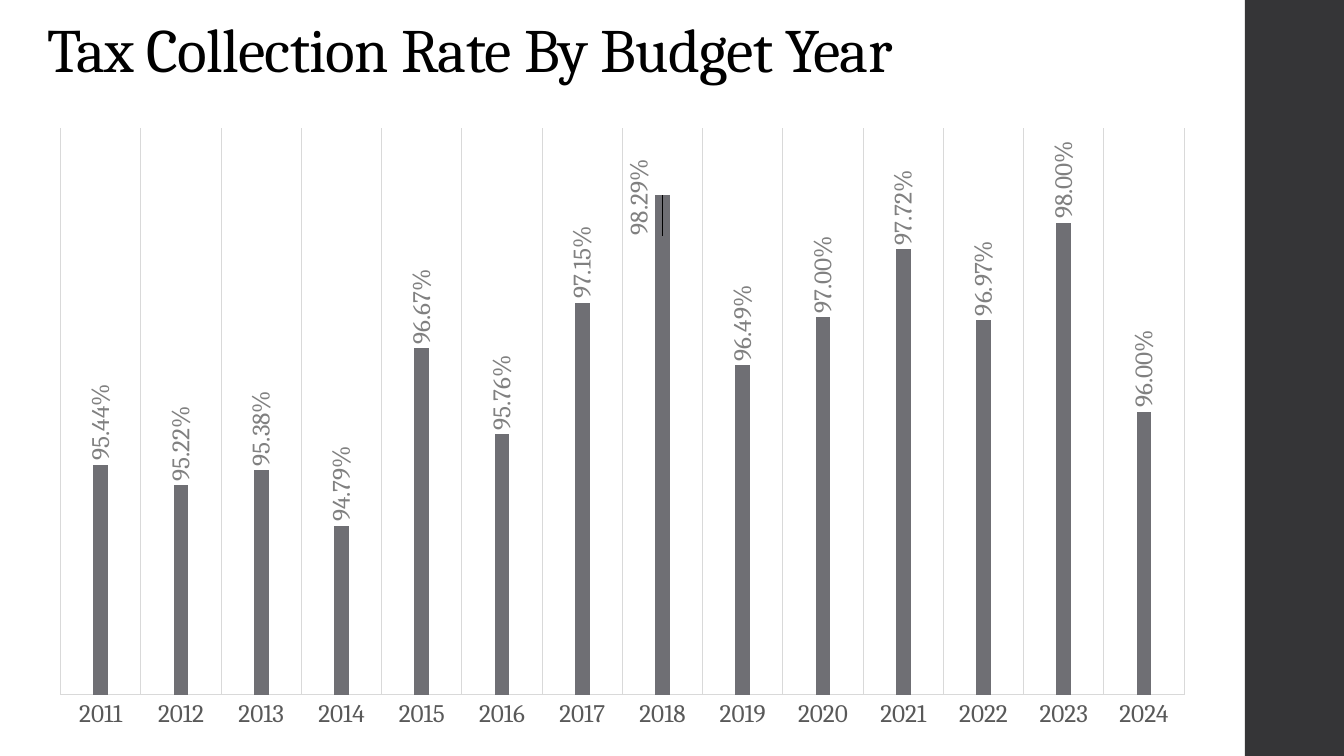
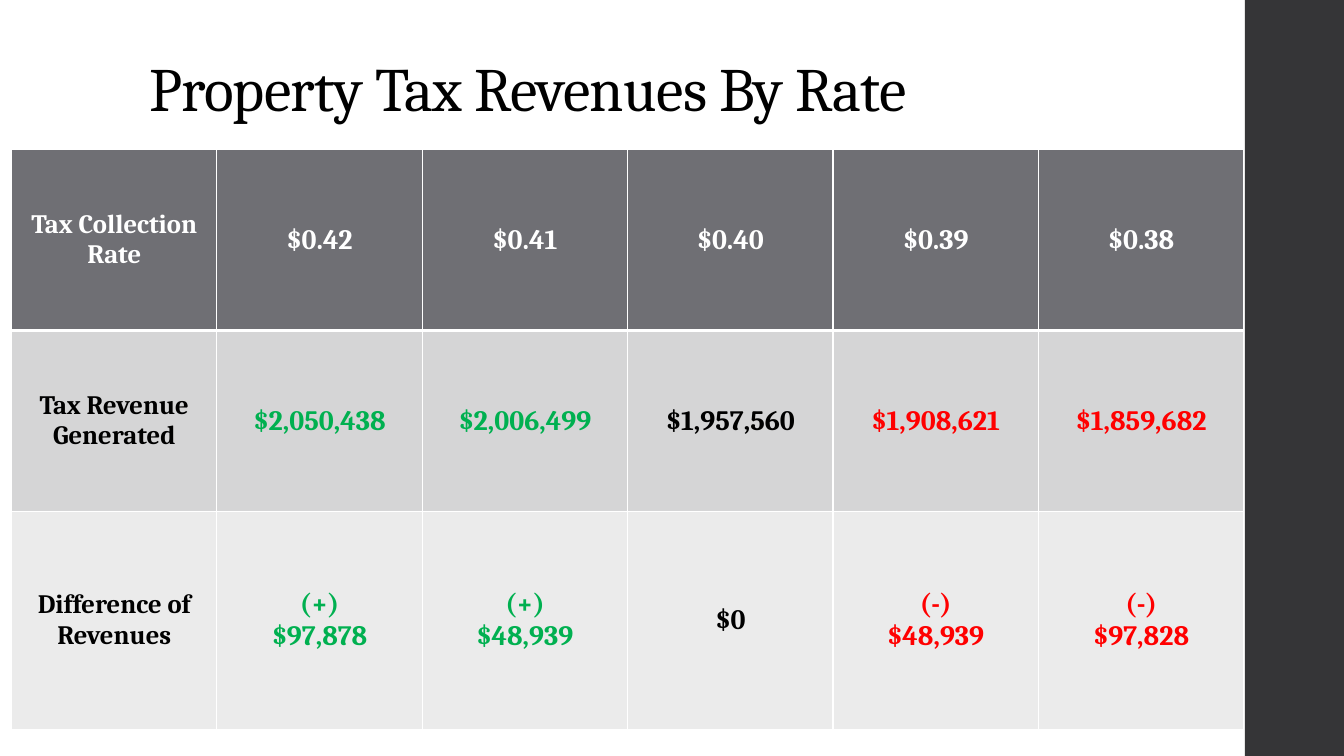
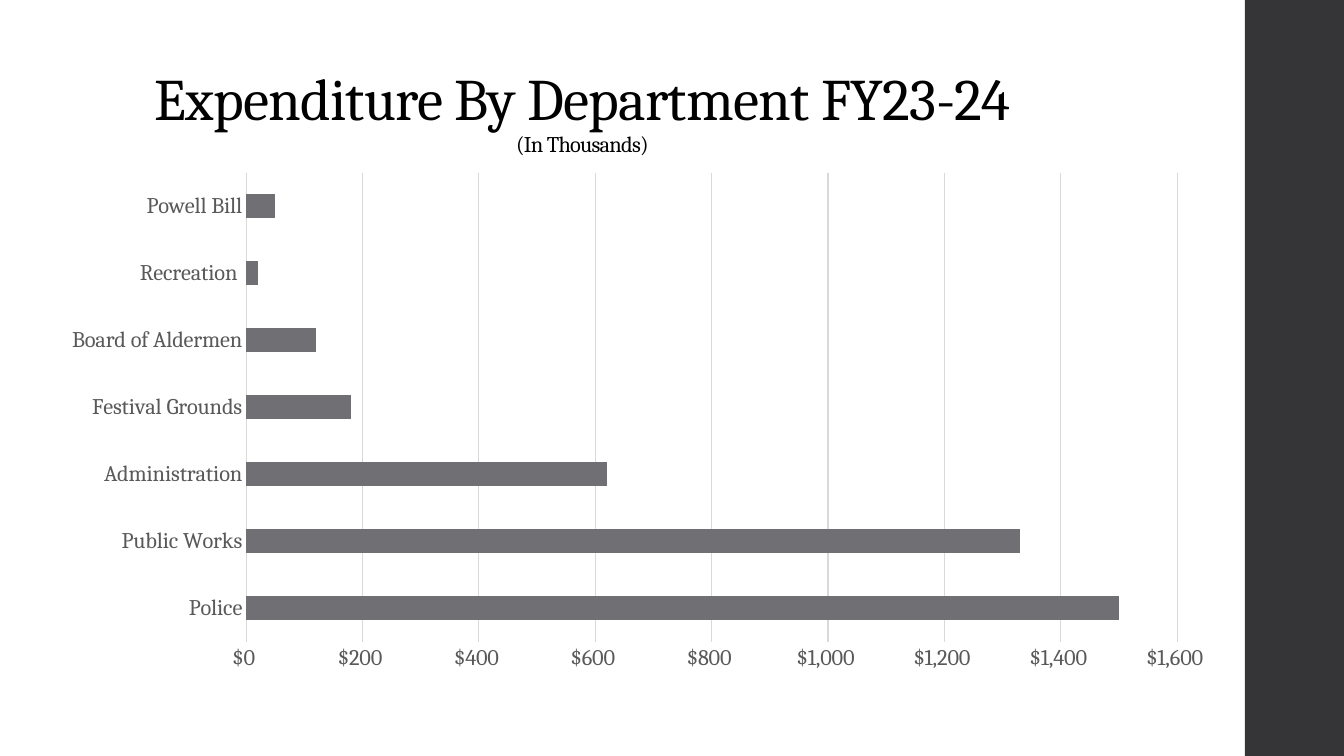
from dataclasses import dataclass
from copy import deepcopy

from lxml import etree
from pptx import Presentation
from pptx import util as u
from pptx.chart.data import CategoryChartData
from pptx.dml.color import RGBColor
from pptx.enum import chart as charts, shapes, text
from pptx.oxml import ns


@dataclass(frozen=True)
class Theme:
    font: str = "Cambria"
    paper: str = "FFFFFF"
    ink: str = "000000"
    band: str = "353537"
    accent: str = "6F6F74"
    row_dark: str = "D5D5D6"
    row_light: str = "EBEBEB"
    rule: str = "D9D9D9"
    axis_text: str = "595959"
    label_text: str = "808080"
    gain: str = "00B050"
    loss: str = "FF0000"
    title_size: float = 44
    long_title_size: float = 42
    subtitle_size: float = 16
    head_size: float = 19
    cell_size: float = 20
    label_size: float = 18
    axis_size: float = 16


THEME = Theme()
WIDTH, HEIGHT = u.Cm(33.87), u.Cm(19.05)
BAND_LEFT = u.Cm(31.37)


def rgb(value):
    return RGBColor.from_string(value)


def child(parent, tag, **attributes):
    return etree.SubElement(parent, ns.qn(tag), attributes)


class Deck:
    def __init__(self, theme):
        self.theme = theme
        self.deck = Presentation()
        self.deck.slide_width, self.deck.slide_height = WIDTH, HEIGHT
        self.page = None

    def add_page(self):
        """Start a slide with the dark band on its right edge."""
        self.page = self.deck.slides.add_slide(self.deck.slide_layouts[6])
        band = self.page.shapes.add_shape(
            shapes.MSO_SHAPE.RECTANGLE, BAND_LEFT, 0, WIDTH - BAND_LEFT, HEIGHT)
        band.shadow.inherit = False
        band.fill.solid()
        band.fill.fore_color.rgb = rgb(self.theme.band)
        band.line.fill.background()

    def style_font(self, font, size, color, bold=False):
        font.name, font.size, font.bold = self.theme.font, u.Pt(size), bold
        font.color.rgb = rgb(color)

    def add_title(self, at, lines, align=text.PP_ALIGN.LEFT):
        """Write (words, size) lines as one paragraph at the foot of its box."""
        box = self.page.shapes.add_textbox(*map(u.Cm, at))
        frame = box.text_frame
        frame.word_wrap = True
        frame.vertical_anchor = text.MSO_ANCHOR.BOTTOM
        para = frame.paragraphs[0]
        para.alignment, para.line_spacing = align, 0.9
        for number, (words, size) in enumerate(lines):
            if number:
                para.add_line_break()
            span = para.add_run()
            span.text = words
            self.style_font(span.font, size, self.theme.ink)
            span.font._element.set("spc", "-50")

    def add_bars(self, at, kind, categories, values, number_format, gap, axis_size):
        data = CategoryChartData(number_format=number_format)
        data.categories = categories
        data.add_series("Series 1", values)
        chart = self.page.shapes.add_chart(kind, *map(u.Cm, at), data).chart
        chart.has_legend = chart.has_title = False
        self.style_font(chart.font, 10, self.theme.ink)
        plot = chart.plots[0]
        plot.gap_width, plot.vary_by_categories = gap, False
        fill = plot.series[0].format.fill
        fill.solid()
        fill.fore_color.rgb = rgb(self.theme.accent)
        for axis in (chart.category_axis, chart.value_axis):
            axis.major_tick_mark = axis.minor_tick_mark = charts.XL_TICK_MARK.NONE
            axis.has_major_gridlines = False
            self.style_font(axis.tick_labels.font, axis_size, self.theme.axis_text)
        self.style_line(chart.category_axis.format.line)
        chart.value_axis.format.line.fill.background()
        return chart

    def style_line(self, line):
        line.color.rgb, line.width = rgb(self.theme.rule), u.Pt(0.75)

    def add_grid(self, axis):
        axis.has_major_gridlines = True
        self.style_line(axis.major_gridlines.format.line)

    def add_upright_labels(self, plot, number_format):
        plot.has_data_labels = False
        labels = plot.series[0].data_labels
        labels.show_value = True
        labels.number_format, labels.number_format_is_linked = number_format, False
        labels.position = charts.XL_LABEL_POSITION.OUTSIDE_END
        self.style_font(labels.font, self.theme.label_size, self.theme.label_text)
        body = labels._element.find(".//" + ns.qn("a:bodyPr"))
        body.set("rot", "-5400000")
        body.set("vert", "horz")
        return labels

    def shift_label(self, plot, index, across, down):
        """Move one label by fractions of the chart's width and height."""
        series = plot.series[0]
        series.points[index].data_label.position = charts.XL_LABEL_POSITION.OUTSIDE_END
        group = series.data_labels._element
        label = group.find(ns.qn("c:dLbl"))
        for old in label.findall(ns.qn("c:txPr")) + label.findall(ns.qn("c:spPr")):
            label.remove(old)
        layout = etree.Element(ns.qn("c:layout"))
        manual = child(layout, "c:manualLayout")
        child(manual, "c:x", val=str(across))
        child(manual, "c:y", val=str(down))
        parts = [layout] + [deepcopy(group.find(ns.qn(tag)))
                            for tag in ("c:numFmt", "c:txPr")]
        for place, part in enumerate(parts, 1):
            label.insert(place, part)

    def add_table(self, at, rows, heights, fills, colors):
        """Fill a table; colors holds one list of text colours per row."""
        frame = self.page.shapes.add_table(len(rows), len(rows[0]), *map(u.Cm, at))
        table = frame.table
        for row, height in zip(table.rows, heights):
            row.height = u.Cm(height)
        for r, row in enumerate(rows):
            for c, words in enumerate(row):
                cell = table.cell(r, c)
                size = self.theme.cell_size if c else self.theme.head_size
                self.fill_cell(cell, words, size, colors[r][c])
                self.add_borders(cell, top=3 if r == 1 else 1, bottom=1 if r else 3)
                cell.fill.solid()
                cell.fill.fore_color.rgb = rgb(fills[r])

    def fill_cell(self, cell, words, size, color):
        cell.vertical_anchor = text.MSO_ANCHOR.MIDDLE
        frame = cell.text_frame
        for number, line in enumerate(words.split("\n")):
            para = frame.add_paragraph() if number else frame.paragraphs[0]
            para.alignment = text.PP_ALIGN.CENTER
            span = para.add_run()
            span.text = line
            self.style_font(span.font, size, color, bold=True)

    def add_borders(self, cell, top, bottom):
        properties = cell._tc.get_or_add_tcPr()
        for side, width in (("L", 1), ("R", 1), ("T", top), ("B", bottom)):
            line = child(properties, "a:ln" + side, w=str(u.Pt(width)))
            child(child(line, "a:solidFill"), "a:srgbClr", val=self.theme.paper)


def add_collection_rate(deck):
    deck.add_page()
    deck.add_title((0.94, 0, 28.6, 2.29),
                   [("Tax Collection Rate By Budget Year", THEME.title_size)])
    rates = (0.9544, 0.9522, 0.9538, 0.9479, 0.9667, 0.9576, 0.9715,
             0.9829, 0.9649, 0.97, 0.9772, 0.9697, 0.98, 0.96)
    years = [str(year) for year in range(2011, 2025)]
    chart = deck.add_bars((0.94, 2.92, 29.49, 15.75),
                          charts.XL_CHART_TYPE.COLUMN_CLUSTERED,
                          years, rates, "0.00%", 444, THEME.label_size)
    plot = chart.plots[0]
    plot.overlap = -90
    deck.add_grid(chart.category_axis)
    axis = chart.value_axis
    axis.minimum_scale, axis.maximum_scale, axis.visible = 0.93, 0.99, False
    deck.add_upright_labels(plot, "0.00%")
    deck.shift_label(plot, years.index("2018"), -0.02, 0.07)


def add_revenues(deck):
    deck.add_page()
    deck.add_title((3.51, 1.02, 26.92, 2.26),
                   [("Property Tax Revenues By Rate", THEME.title_size)])
    rows = (
        ("Tax Collection Rate", "$0.42", "$0.41", "$0.40", "$0.39", "$0.38"),
        ("Tax Revenue Generated", "$2,050,438", "$2,006,499", "$1,957,560",
         "$1,908,621", "$1,859,682"),
        ("Difference of Revenues", "(+)\n$97,878", "(+)\n$48,939", "$0",
         "(-)\n$48,939", "(-)\n$97,828"),
    )
    trend = [THEME.ink, THEME.gain, THEME.gain, THEME.ink, THEME.loss, THEME.loss]
    deck.add_table((0.29, 3.77, 31.06, 14.61), rows, (4.56, 4.56, 5.49),
                   (THEME.accent, THEME.row_dark, THEME.row_light),
                   ([THEME.paper] * 6, trend, trend))


def add_expenditure(deck):
    deck.add_page()
    deck.add_title((1.22, 0.41, 26.92, 3.68),
                   [("Expenditure By Department FY23-24", THEME.long_title_size),
                    ("(In Thousands)", THEME.subtitle_size)],
                   text.PP_ALIGN.CENTER)
    spending = {"Police": 1500, "Public Works": 1330, "Administration": 620,
                "Festival Grounds": 180, "Board of Aldermen": 120,
                "Recreation ": 20, "Powell Bill": 50}
    dollars = '"$"#,##0_);[Red]\\("$"#,##0\\)'
    chart = deck.add_bars((1.22, 4.09, 29.82, 13.08),
                          charts.XL_CHART_TYPE.BAR_CLUSTERED,
                          list(spending), list(spending.values()),
                          dollars, 182, THEME.axis_size)
    axis = chart.value_axis
    deck.add_grid(axis)
    axis.minimum_scale, axis.maximum_scale, axis.major_unit = 0, 1600, 200
    axis.tick_labels.number_format = dollars
    axis.tick_labels.number_format_is_linked = False


def main():
    deck = Deck(THEME)
    add_collection_rate(deck)
    add_revenues(deck)
    add_expenditure(deck)
    deck.deck.save("out.pptx")


if __name__ == "__main__":
    main()
